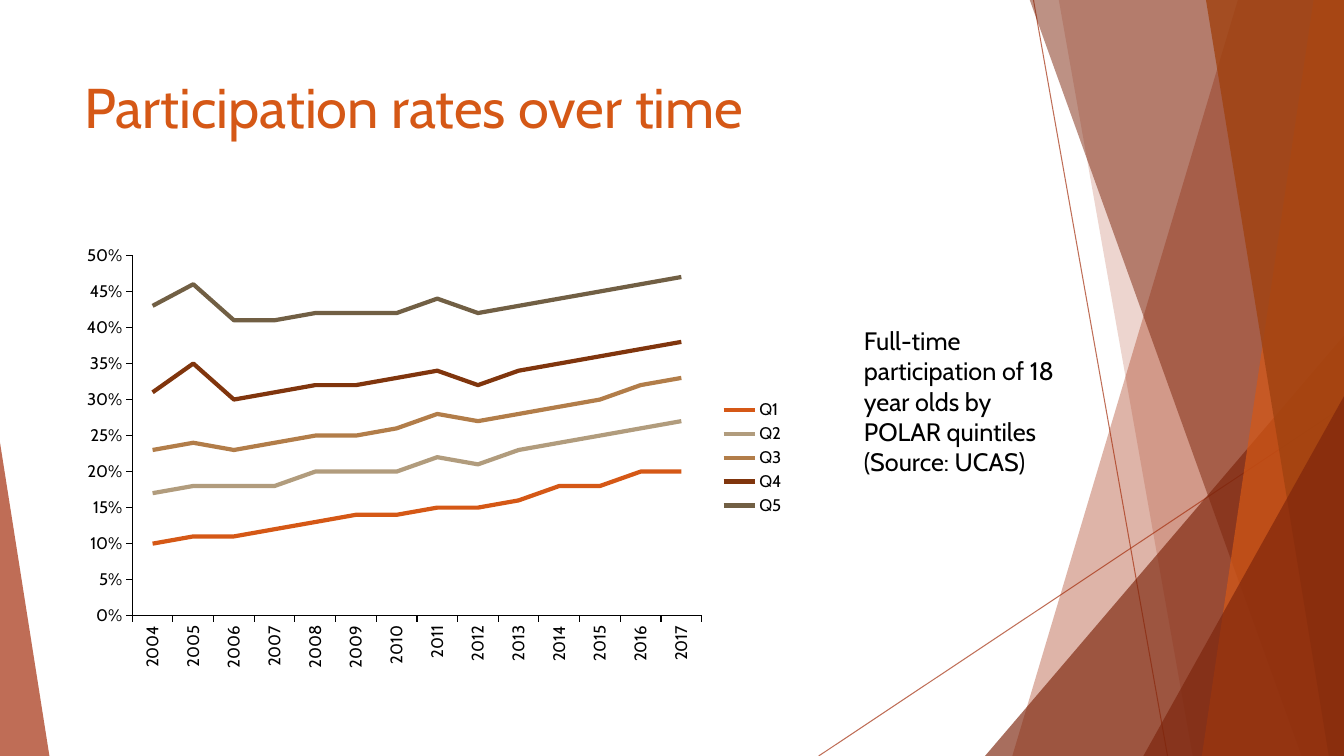
from dataclasses import dataclass

import pptx
import pptx.chart.data
import pptx.dml.color
import pptx.enum.chart
import pptx.enum.shapes
import pptx.enum.text
import pptx.oxml.ns
import pptx.oxml.xmlchemy
import pptx.util
from pptx.util import Inches, Pt

FONT = "Cabin"
BLACK, ORANGE, RED, DARK_RED, BROWN = "000000", "D55816", "A5300F", "7C240B", "A04210"
TOP, RIGHT, BOTTOM = -0.01, 13.33, 7.5


@dataclass
class Ray:
    start: tuple[float, float]
    end: tuple[float, float]


@dataclass
class Band:
    """A full-height band from its slanted left edge to the right of the slide."""
    top_left: float
    bottom_left: float
    colour: str
    opacity: int


@dataclass
class Corner:
    """A right triangle rising from the foot of the slide."""
    left: float
    top: float
    width: float
    apex: int
    colour: str
    opacity: int


@dataclass
class Quintile:
    name: str
    colour: str
    percents: list[int]


RAYS = [Ray((10.25, 0), (11.58, BOTTOM)), Ray((RIGHT, 4.03), (8.12, BOTTOM))]
FACETS = [
    Band(12.28, 10.04, RED, 36),
    Band(10.5, 11.83, RED, 20),
    Corner(9.77, 3.33, 3.56, 1, DARK_RED, 66),
    Band(10.21, 12.91, DARK_RED, 50),
    Band(13.03, 11.92, ORANGE, 70),
    Band(11.96, 13.18, BROWN, 80),
    Corner(11.34, 3.93, 1.99, 1, DARK_RED, 66),
    Corner(0, 4.39, 0.49, 0, RED, 70),
]
YEARS = range(2004, 2018)
QUINTILES = [
    Quintile("Q1", ORANGE, [10, 11, 11, 12, 13, 14, 14, 15, 15, 16, 18, 18, 20, 20]),
    Quintile("Q2", "B19C7D", [17, 18, 18, 18, 20, 20, 20, 22, 21, 23, 24, 25, 26, 27]),
    Quintile("Q3", "B27D49", [23, 24, 23, 24, 25, 25, 26, 28, 27, 28, 29, 30, 32, 33]),
    Quintile("Q4", "80350D", [31, 35, 30, 31, 32, 32, 33, 34, 32, 34, 35, 36, 37, 38]),
    Quintile("Q5", "715F44", [43, 46, 41, 41, 42, 42, 42, 44, 42, 43, 44, 45, 46, 47]),
]


def apply(target, values: dict) -> None:
    for name, value in values.items():
        setattr(target, name, value)


def paint(fill, colour: str, opacity: int = 100) -> None:
    """Colour a fill, line fill or font fill, with optional transparency."""
    fill.solid()
    fill.fore_color.rgb = pptx.dml.color.RGBColor.from_string(colour)
    if opacity < 100:
        element = fill._xPr.find(".//" + pptx.oxml.ns.qn("a:srgbClr"))
        alpha = pptx.oxml.xmlchemy.OxmlElement("a:alpha")
        alpha.set("val", str(opacity * 1000))
        element.append(alpha)


def style_font(font, size: float, colour: str) -> None:
    apply(font, {"name": FONT, "size": Pt(size), "bold": False})
    paint(font.fill, colour)


def draw_ray(page, ray: Ray) -> None:
    ends = [Inches(value) for value in ray.start + ray.end]
    line = page.shapes.add_connector(pptx.enum.shapes.MSO_CONNECTOR.STRAIGHT, *ends)
    line.line.width = Pt(0.75)
    paint(line.line.fill, RED, 70)
    line._element.spPr.append(pptx.oxml.xmlchemy.OxmlElement("a:effectLst"))


def draw_facet(page, facet: Band | Corner) -> None:
    if isinstance(facet, Band):
        outline = [(RIGHT, TOP), (RIGHT, BOTTOM), (facet.bottom_left, BOTTOM)]
        builder = page.shapes.build_freeform(Inches(facet.top_left), Inches(TOP))
        builder.add_line_segments([(Inches(x), Inches(y)) for x, y in outline])
        shape = builder.convert_to_shape()
    else:
        shape = page.shapes.add_shape(
            pptx.enum.shapes.MSO_SHAPE.ISOSCELES_TRIANGLE, Inches(facet.left),
            Inches(facet.top), Inches(facet.width), Inches(BOTTOM - facet.top))
        shape.adjustments[0] = facet.apex
    shape.shadow.inherit = False
    shape.line.fill.background()
    paint(shape.fill, facet.colour, facet.opacity)


def write_text(box, text: str, size: float, colour: str) -> None:
    apply(box.text_frame, {
        "word_wrap": True,
        "auto_size": pptx.enum.text.MSO_AUTO_SIZE.NONE,
        "vertical_anchor": pptx.enum.text.MSO_ANCHOR.TOP,
    })
    para = box.text_frame.paragraphs[0]
    para.alignment = pptx.enum.text.PP_ALIGN.LEFT
    span = para.add_run()
    span.text = text
    style_font(span.font, size, colour)


def style_axis(axis, line_width: float) -> None:
    apply(axis, {
        "has_major_gridlines": False,
        "major_tick_mark": pptx.enum.chart.XL_TICK_MARK.OUTSIDE,
        "minor_tick_mark": pptx.enum.chart.XL_TICK_MARK.NONE,
    })
    style_font(axis.tick_labels.font, 12, BLACK)
    axis.format.line.width = Pt(line_width)
    paint(axis.format.line.fill, BLACK)


def place_plot(chart, frame: dict[str, float]) -> None:
    """Fix the inner plot area, as fractions of the chart."""
    area = chart._chartSpace.chart.plotArea
    for old in area.findall(pptx.oxml.ns.qn("c:layout")):
        area.remove(old)
    layout = pptx.oxml.xmlchemy.OxmlElement("c:layout")
    manual = pptx.oxml.xmlchemy.OxmlElement("c:manualLayout")
    layout.append(manual)
    modes = {"layoutTarget": "inner", "xMode": "edge", "yMode": "edge"}
    for name, value in (modes | frame).items():
        item = pptx.oxml.xmlchemy.OxmlElement("c:" + name)
        item.set("val", str(value))
        manual.append(item)
    area.insert(0, layout)


def draw_chart(page) -> None:
    data = pptx.chart.data.CategoryChartData(number_format="0%")
    data.categories = [str(year) for year in YEARS]
    for quintile in QUINTILES:
        data.add_series(quintile.name, [percent / 100 for percent in quintile.percents])
    chart = page.shapes.add_chart(
        pptx.enum.chart.XL_CHART_TYPE.LINE, Inches(0.74), Inches(2.36),
        Inches(7.15), Inches(4.36), data).chart
    apply(chart, {"has_title": False, "has_legend": True})
    style_font(chart.font, 12, BLACK)
    place_plot(chart, {"x": 0.08, "y": 0.04, "w": 0.79, "h": 0.82})

    # Axes
    style_axis(chart.category_axis, 0.75)
    style_axis(chart.value_axis, 1)
    apply(chart.value_axis, {
        "minimum_scale": 0, "maximum_scale": 0.5, "major_unit": 0.05})
    apply(chart.value_axis.tick_labels, {
        "number_format": "0%", "number_format_is_linked": False})
    year_text = chart.category_axis._element.find(pptx.oxml.ns.qn("c:txPr"))
    year_text.find(pptx.oxml.ns.qn("a:bodyPr")).set("rot", "-5400000")

    # Legend and lines
    apply(chart.legend, {
        "position": pptx.enum.chart.XL_LEGEND_POSITION.RIGHT,
        "include_in_layout": False})
    style_font(chart.legend.font, 12, BLACK)
    chart.plots[0].vary_by_categories = False
    for series, quintile in zip(chart.plots[0].series, QUINTILES):
        series.smooth = False
        series.format.line.width = Pt(3)
        paint(series.format.line.fill, quintile.colour)


def main() -> None:
    deck = pptx.Presentation()
    apply(deck, {"slide_width": Inches(RIGHT), "slide_height": Inches(BOTTOM)})
    page = deck.slides.add_slide(deck.slide_layouts[5])
    # Faceted background
    for ray in RAYS:
        draw_ray(page, ray)
    for facet in FACETS:
        draw_facet(page, facet)
    # Title, chart and note
    title = page.shapes.title
    apply(title, {"left": Inches(0.74), "top": Inches(0.67),
                  "width": Inches(9.4), "height": Inches(1.44)})
    write_text(title, "Participation rates over time", 40, ORANGE)
    draw_chart(page)
    note = page.shapes.add_textbox(Inches(8.47), Inches(3.18), Inches(2.19), Inches(1.62))
    write_text(note, "Full-time participation of 18 year olds by POLAR quintiles "
                     "(Source: UCAS)", 18, BLACK)
    deck.save("out.pptx")


if __name__ == "__main__":
    main()
